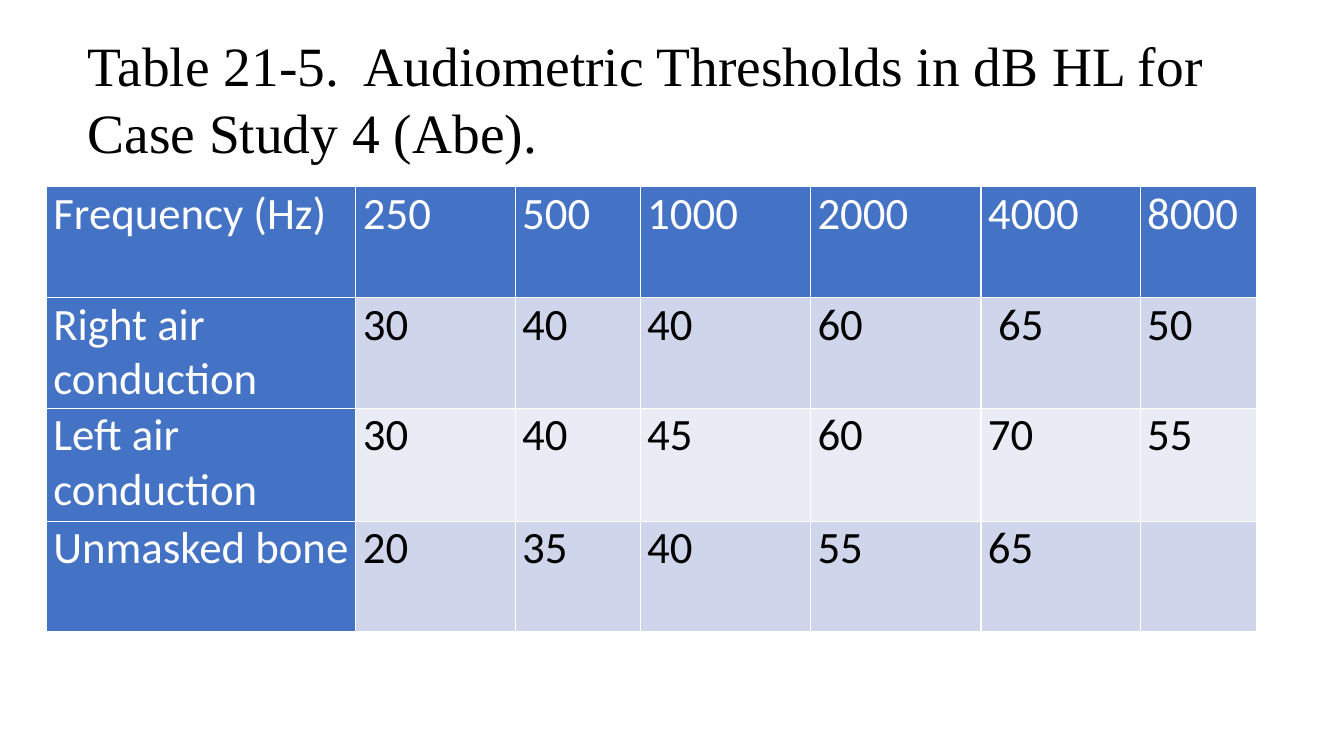
from lxml.etree import SubElement
from pptx import Presentation
from pptx.dml.color import RGBColor
from pptx.enum.text import MSO_VERTICAL_ANCHOR as Anchor
from pptx.oxml.ns import qn
from pptx.util import Inches, Pt

BLACK = RGBColor(0x00, 0x00, 0x00)
WHITE = RGBColor(0xFF, 0xFF, 0xFF)
BLUE = RGBColor(0x44, 0x72, 0xC4)
BAND_DARK = RGBColor(0xCF, 0xD5, 0xEA)
BAND_LIGHT = RGBColor(0xE9, 0xEB, 0xF5)

TITLE = "Table 21-5.  Audiometric Thresholds in dB HL for Case Study 4 (Abe)."
COLUMN_WIDTHS = [3.07, 1.58, 1.24, 1.69, 1.69, 1.58, 1.15]
ROW_HEIGHTS = [1.1, 1.1, 1.12, 1.1]
THRESHOLDS = [
    ["Frequency (Hz)", "250", "500", "1000", "2000", "4000", "8000"],
    ["Right air conduction", "30", "40", "40", "60", " 65", "50"],
    ["Left air conduction", "30", "40", "45", "60", "70", "55"],
    ["Unmasked bone", "20", "35", "40", "55", "65", ""],
]


class SlideBuilder:
    """Holds the slide and its style, and adds the title and the table."""

    title_font, title_size = "Times New Roman", Pt(39.6)
    table_font, table_size = "Calibri", Pt(32)
    cell_margin = Inches(0.07)
    border_width = Pt(1)

    def __init__(self, slide):
        self.slide = slide

    def set_text(self, text_frame, text, font_name, size, color):
        text_frame.text = text
        for run in text_frame.paragraphs[0].runs:
            run.font.name = font_name
            run.font.size = size
            run.font.color.rgb = color

    def add_title(self, text, left, top, width, height):
        box = self.slide.shapes.add_textbox(
            Inches(left), Inches(top), Inches(width), Inches(height))
        text_frame = box.text_frame
        text_frame.word_wrap = True
        text_frame.vertical_anchor = Anchor.MIDDLE
        self.set_text(text_frame, text, self.title_font, self.title_size, BLACK)

    def add_table(self, rows, widths, heights, left, top):
        frame = self.slide.shapes.add_table(
            len(rows), len(widths), Inches(left), Inches(top),
            Inches(sum(widths)), Inches(sum(heights)))
        table = frame.table
        for column, width in zip(table.columns, widths):
            column.width = Inches(width)
        for row, height in zip(table.rows, heights):
            row.height = Inches(height)
        for row_index, values in enumerate(rows):
            band = BAND_DARK if row_index % 2 else BAND_LIGHT
            for column_index, value in enumerate(values):
                is_header = row_index == 0 or column_index == 0
                self.fill_cell(table.cell(row_index, column_index), value,
                               BLUE if is_header else band,
                               WHITE if is_header else BLACK)

    def fill_cell(self, cell, text, fill_color, text_color):
        cell.margin_left = cell.margin_right = self.cell_margin
        cell.margin_top = cell.margin_bottom = 0
        self.set_text(cell.text_frame, text, self.table_font, self.table_size, text_color)
        for run in cell.text_frame.paragraphs[0].runs:
            run.font.bold = False
        self.add_borders(cell)
        cell.fill.solid()
        cell.fill.fore_color.rgb = fill_color

    def add_borders(self, cell):
        properties = cell._tc.get_or_add_tcPr()
        for side in ("a:lnL", "a:lnR", "a:lnT", "a:lnB"):
            line = SubElement(properties, qn(side), w=str(self.border_width))
            SubElement(SubElement(line, qn("a:solidFill")), qn("a:srgbClr"), val=str(WHITE))


def main():
    presentation = Presentation()
    presentation.slide_width = Inches(13.33)
    presentation.slide_height = Inches(7.5)
    builder = SlideBuilder(presentation.slides.add_slide(presentation.slide_layouts[6]))
    builder.add_title(TITLE, 0.77, 0.4, 11.65, 1.14)
    builder.add_table(THRESHOLDS, COLUMN_WIDTHS, ROW_HEIGHTS, 0.46, 1.85)
    presentation.save("out.pptx")


if __name__ == "__main__":
    main()
